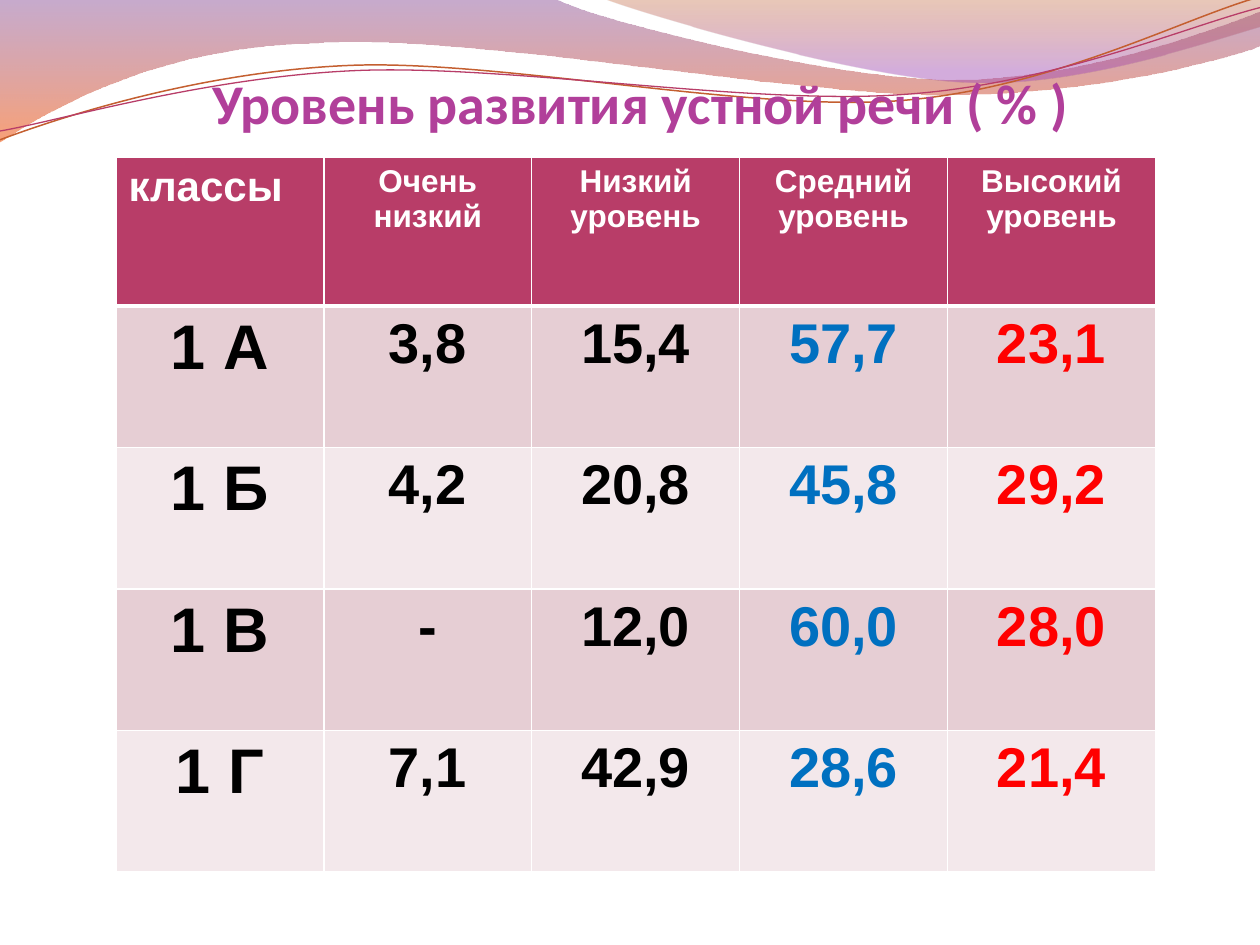
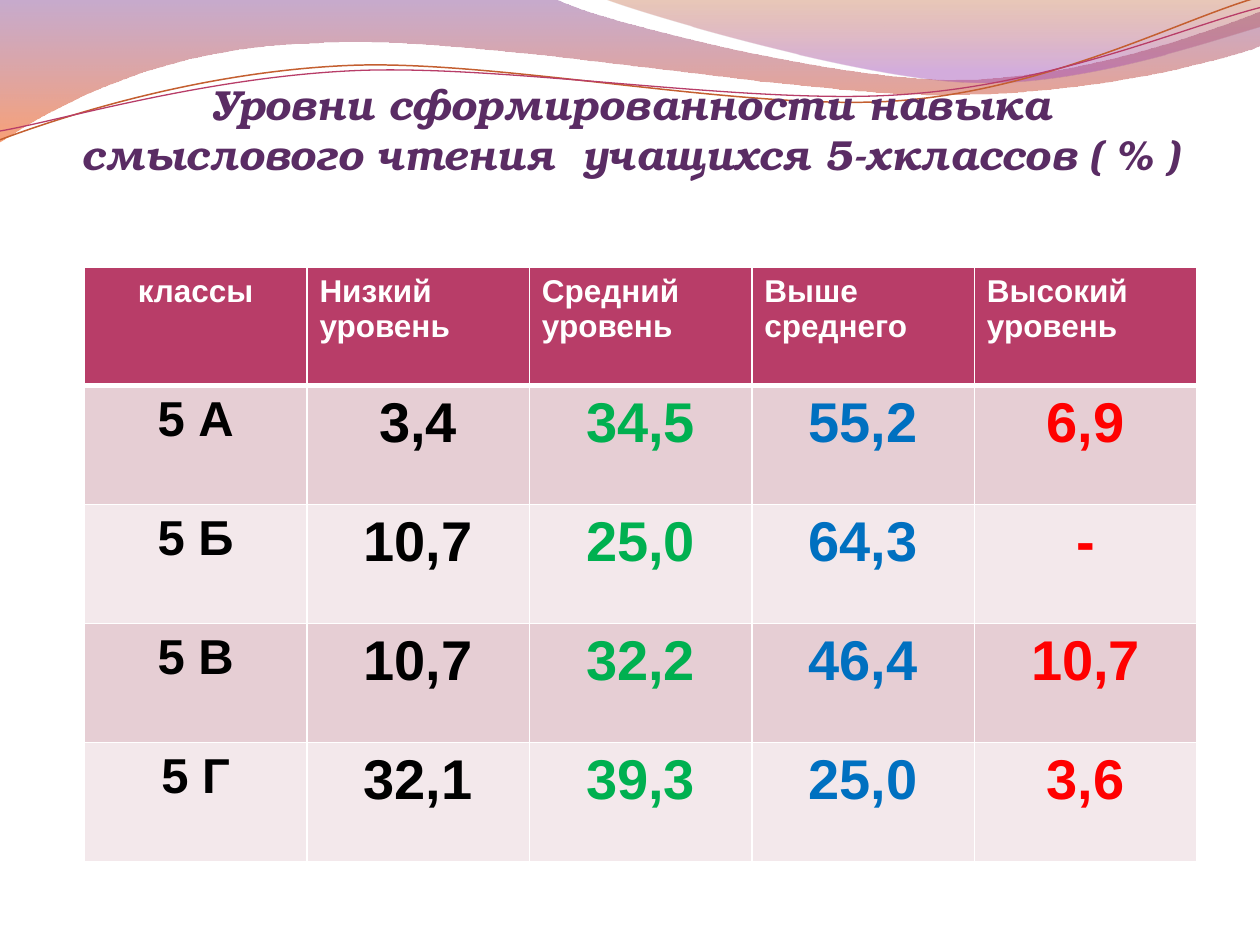
import math

import pptx
import pptx.dml.color
import pptx.enum.text
import pptx.oxml
import pptx.oxml.ns
import pptx.util

WIDTH, HEIGHT = 10, 7.5
COLORS = {
    "white": "FFFFFF", "black": "000000", "header": "B83D68",
    "band_dark": "E6CED4", "band_light": "F3E8EB",
    "green": "00B050", "blue": "0070C0", "red": "FF0000",
    "pink_title": "B13F9A", "plum_title": "5A2C64",
    "violet": "834591", "orange": "F35307", "rust": "B74915",
    "lilac": "A14BB4", "copper": "C45F30",
}
LEFT = pptx.enum.text.PP_ALIGN.LEFT
CENTER = pptx.enum.text.PP_ALIGN.CENTER

# Slide content; boxes are left, top, width, height in inches
SLIDES = [
    {
        "title": "Уровень развития устной речи ( % )",
        "title_box": (0.67, 0.33, 8.83, 0.75),
        "title_font": {"name": "Calibri", "size": 32, "bold": True, "color": "pink_title"},
        "table_box": (0.92, 1.25, 8.25, 5.67),
        "header_height": 1.18,
        "header_sizes": [24, 18, 18, 18, 18],
        "header_aligns": [LEFT] + [CENTER] * 4,
        "class_size": 36,
        "column_colors": ["black", "black", "black", "blue", "red"],
        "rows": [
            ["классы", "Очень\nнизкий", "Низкий уровень", "Средний уровень", "Высокий уровень"],
            ["1 А", "3,8", "15,4", "57,7", "23,1"],
            ["1 Б", "4,2", "20,8", "45,8", "29,2"],
            ["1 В", "-", "12,0", "60,0", "28,0"],
            ["1 Г", "7,1", "42,9", "28,6", "21,4"],
        ],
    },
    {
        "title": "Уровни сформированности навыка смыслового чтения  учащихся 5-хклассов ( % )",
        "title_box": (0.5, 0.42, 9, 1),
        "title_font": {"name": "TeX Gyre Bonum", "size": 24, "bold": True,
                       "italic": True, "color": "plum_title"},
        "table_box": (0.67, 2.12, 8.83, 4.72),
        "header_height": 0.94,
        "header_sizes": [18] * 5,
        "header_aligns": [CENTER] + [LEFT] * 4,
        "class_size": 28,
        "column_colors": ["black", "black", "green", "blue", "red"],
        "rows": [
            ["классы", "Низкий\nуровень", "Средний\nуровень", "Выше среднего",
             "Высокий\nуровень"],
            ["5 А", "3,4", "34,5", "55,2", "6,9"],
            ["5 Б", "10,7", "25,0", "64,3", "-"],
            ["5 В", "10,7", "32,2", "46,4", "10,7"],
            ["5 Г", "32,1", "39,3", "25,0", "3,6"],
        ],
    },
]

# Wave outlines: one point is a straight step, three points a Bezier curve.
# Stops are position, colour, opacity in percent.
WAVES = [
    {"box": (-0.01, -0.01, 10.02, 1.14), "turn": 0,
     "start": (0, 0),
     "steps": [[(4.4, -0.01)],
               [(4.76, 0.17), (6.64, 0.63), (7.58, 0.63)],
               [(8.53, 0.63), (9.58, 0.26), (10, 0.09)],
               [(10.01, 0.36)],
               [(9.83, 0.44), (8.7, 0.76), (7.46, 0.75)],
               [(6.22, 0.75), (3.82, 0.28), (2.57, 0.34)],
               [(1.29, 0.36), (0.46, 0.83), (-0.01, 1.13)],
               [(0, 0)]],
     "stops": [(0, "violet", 45), (1, "orange", 55)]},
    {"box": (4.79, -0.01, 5.21, 0.7), "turn": 0,
     "start": (4.79, -0.01),
     "steps": [[(5.09, 0.11), (6.82, 0.62), (7.69, 0.65)],
               [(8.56, 0.69), (9.61, 0.32), (10, 0.21)],
               [(10, 0)],
               [(4.79, -0.01)]],
     "stops": [(0, "rust", 30), (0.8, "lilac", 45)]},
    {"box": (-0.02, 0.22, 10.02, 0.71), "turn": -2.7,
     "start": (0, 1.11),
     "steps": [[(0.48, 0.93), (1.58, 0.57), (2.77, 0.52)],
               [(3.95, 0.47), (5.93, 0.89), (7.13, 0.8)],
               [(8.33, 0.71), (9.38, 0.15), (9.98, -0.02)]],
     "line": ("copper", 0.85)},
    {"box": (-0.02, 0.3, 10.03, 0.58), "turn": -2.7,
     "start": (0, 1.04),
     "steps": [[(0.47, 0.96), (1.64, 0.61), (2.83, 0.56)],
               [(4.03, 0.51), (5.97, 0.84), (7.17, 0.75)],
               [(8.36, 0.67), (9.41, 0.21), (10, 0.06)]],
     "line": ("header", 0.75)},
]


def rgb(name):
    return pptx.dml.color.RGBColor.from_string(COLORS[name])


def inches(values):
    return [pptx.util.Inches(value) for value in values]


def place(item, box):
    item.left, item.top, item.width, item.height = inches(box)


def format_font(font, formats):
    for key, value in formats.items():
        if key == "color":
            font.color.rgb = rgb(value)
        else:
            setattr(font, key, pptx.util.Pt(value) if key == "size" else value)


def to_local(point, box, turn):
    """Give a slide point in the coordinates of a box turned about its centre."""
    left, top, width, height = box
    angle = math.radians(-turn)
    across, down = point[0] - left - width / 2, point[1] - top - height / 2
    return inches((across * math.cos(angle) - down * math.sin(angle) + width / 2,
                   across * math.sin(angle) + down * math.cos(angle) + height / 2))


def bend(shape, wave):
    """Swap the straight segments of the outline for its Bezier curves."""
    outline = next(shape.element.iter(pptx.oxml.ns.qn("a:path")))
    outline.set("w", str(shape.width))
    outline.set("h", str(shape.height))
    segments = [[wave["start"]]] + wave["steps"]
    for index, (old, points) in enumerate(zip(list(outline), segments)):
        tag = "moveTo" if index == 0 else ("lnTo" if len(points) == 1 else "cubicBezTo")
        corners = "".join('<a:pt x="{}" y="{}"/>'.format(*to_local(point, wave["box"], wave["turn"]))
                          for point in points)
        outline.replace(old, pptx.oxml.parse_xml(
            f'<a:{tag} {pptx.oxml.ns.nsdecls("a")}>{corners}</a:{tag}>'))


def add_wave(page, wave):
    builder = page.shapes.build_freeform(*inches(wave["start"]))
    builder.add_line_segments([inches(step[-1]) for step in wave["steps"]],
                              close="stops" in wave)
    shape = builder.convert_to_shape()
    place(shape, wave["box"])
    bend(shape, wave)
    shape.rotation = wave["turn"]
    shape.shadow.inherit = False
    if "line" in wave:
        color, width = wave["line"]
        shape.fill.background()
        shape.line.color.rgb = rgb(color)
        shape.line.width = pptx.util.Pt(width)
        return shape
    shape.line.fill.background()
    shape.fill.gradient()
    shape.fill.gradient_angle = 270
    for stop, (position, color, _) in zip(shape.fill.gradient_stops, wave["stops"]):
        stop.position = position
        stop.color.rgb = rgb(color)
    tones = shape.element.iter(pptx.oxml.ns.qn("a:srgbClr"))
    for tone, (_, _, opacity) in zip(list(tones), wave["stops"]):
        tone.append(pptx.oxml.parse_xml(
            f'<a:alpha {pptx.oxml.ns.nsdecls("a")} val="{opacity * 1000}"/>'))
    return shape


def add_waves_to_layout(page):
    """Draw the waves once and place them behind everything on the layout."""
    tree = page.slide_layout.shapes.element
    for index, wave in enumerate(WAVES):
        tree.insert(2 + index, add_wave(page, wave).element)


def set_borders(cell, widths):
    properties = cell._tc.get_or_add_tcPr()
    for index, (side, width) in enumerate(widths.items()):
        properties.insert(index, pptx.oxml.parse_xml(
            f'<a:ln{side} {pptx.oxml.ns.nsdecls("a")} w="{pptx.util.Pt(width)}">'
            f'<a:solidFill><a:srgbClr val="{COLORS["white"]}"/></a:solidFill></a:ln{side}>'))


def add_title(page, content):
    title = page.shapes.title
    place(title, content["title_box"])
    frame = title.text_frame
    frame_formats = {"margin_left": 0, "margin_right": 0, "margin_bottom": 0,
                     "margin_top": pptx.util.Inches(0.05), "word_wrap": True,
                     "vertical_anchor": pptx.enum.text.MSO_ANCHOR.BOTTOM,
                     "auto_size": pptx.enum.text.MSO_AUTO_SIZE.NONE}
    for key, value in frame_formats.items():
        setattr(frame, key, value)
    frame.text = content["title"]
    para = frame.paragraphs[0]
    para.alignment = CENTER
    format_font(para.runs[0].font, content["title_font"])


def add_level_table(page, content):
    rows = content["rows"]
    box = inches(content["table_box"])
    table = page.shapes.add_table(len(rows), len(rows[0]), *box).table
    table.horz_banding = False
    for column in table.columns:
        column.width = box[2] // len(rows[0])
    header = pptx.util.Inches(content["header_height"])
    for r, row in enumerate(table.rows):
        row.height = header if r == 0 else (box[3] - header) // (len(rows) - 1)

    for r, values in enumerate(rows):
        band = "header" if r == 0 else ("band_light", "band_dark")[r % 2]
        for c, value in enumerate(values):
            if r == 0:
                size, color = content["header_sizes"][c], "white"
                align = content["header_aligns"][c]
            else:
                size = content["class_size"] if c == 0 else 32
                color, align = content["column_colors"][c], CENTER
            cell = table.cell(r, c)
            cell.fill.solid()
            cell.fill.fore_color.rgb = rgb(band)
            set_borders(cell, {"L": 1, "R": 1, "T": 3 if r == 1 else 1, "B": 3 if r == 0 else 1})
            cell.text = value
            for para in cell.text_frame.paragraphs:
                para.alignment = align
                for span in para.runs:
                    format_font(span.font, {"name": "Arial", "size": size,
                                            "bold": True, "color": color})


def main():
    deck = pptx.Presentation()
    deck.slide_width, deck.slide_height = inches((WIDTH, HEIGHT))
    title_only = deck.slide_layouts[5]
    for number, content in enumerate(SLIDES):
        page = deck.slides.add_slide(title_only)
        if number == 0:
            add_waves_to_layout(page)
        add_title(page, content)
        add_level_table(page, content)
    deck.save("out.pptx")


if __name__ == "__main__":
    main()
